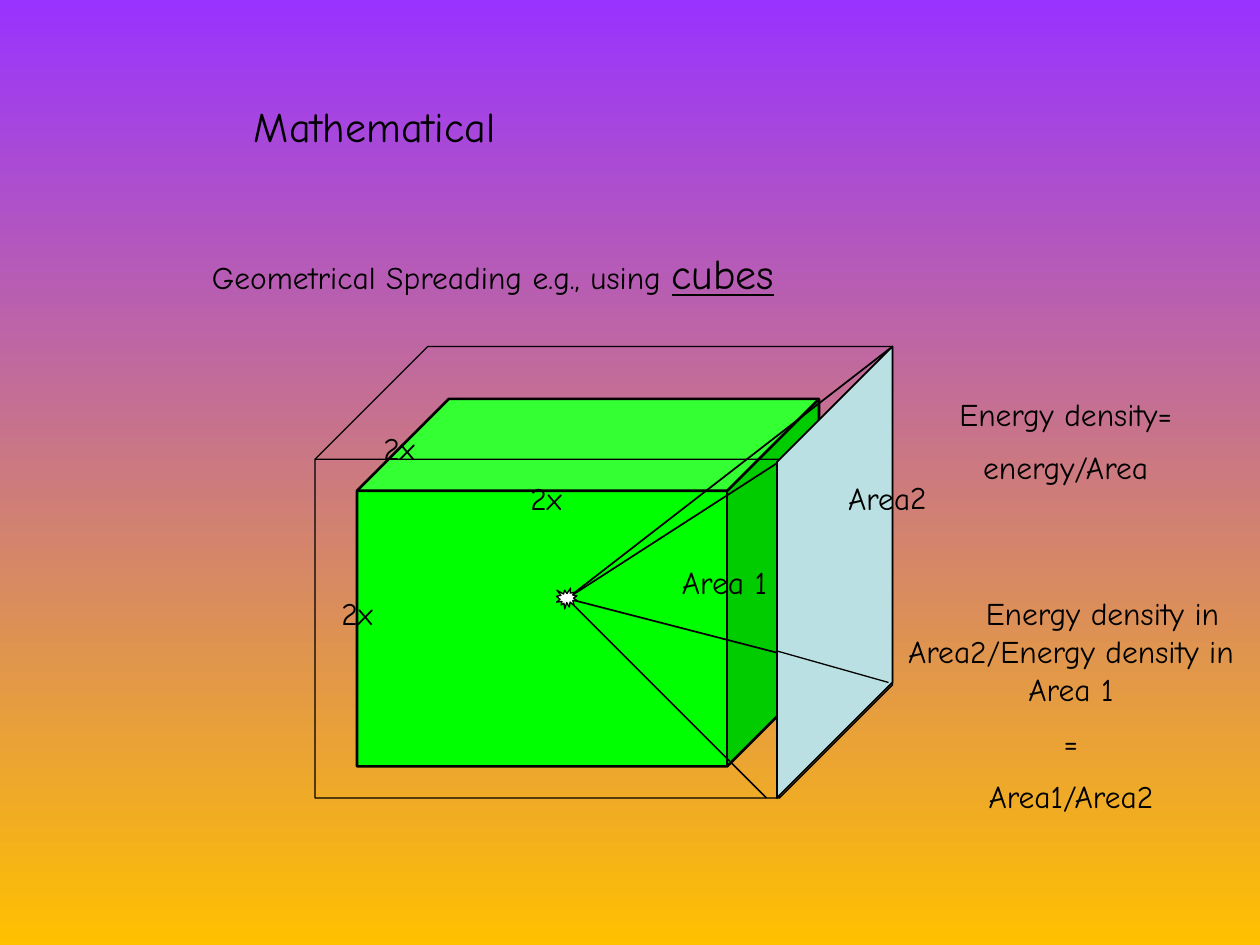
from dataclasses import dataclass

from lxml import etree
from pptx import Presentation
from pptx.dml.color import RGBColor
from pptx.enum.shapes import MSO_CONNECTOR, MSO_SHAPE
from pptx.enum.text import PP_ALIGN
from pptx.oxml.ns import qn
from pptx.util import Emu, Pt

STRAIGHT = MSO_CONNECTOR.STRAIGHT
CUBE, BURST = MSO_SHAPE.CUBE, MSO_SHAPE.EXPLOSION1
LEFT, CENTER = PP_ALIGN.LEFT, PP_ALIGN.CENTER
EMU_PER_PX = 9525  # 96 px to the inch


@dataclass(frozen=True)
class Theme:
    font: str = "Comic Neue"
    ink: str = "000000"
    sky: str = "9933FF"
    ground: str = "FFC000"
    inner: str = "00FF00"
    face: str = "BBE0E3"
    burst: str = "FFFFFF"
    large: int = 24
    body: int = 18
    gap: int = 9
    thin: float = 0.75
    medium: float = 1
    thick: float = 1.5


THEME = Theme()


def px(*lengths):
    return [Emu(length * EMU_PER_PX) for length in lengths]


def rgb(code):
    return RGBColor.from_string(code)


def set_outline(line, width):
    line.color.rgb = rgb(THEME.ink)
    line.width = Pt(width)


def paint(shape, fill, width):
    shape.shadow.inherit = False
    if fill:
        shape.fill.solid()
        shape.fill.fore_color.rgb = rgb(fill)
    else:
        shape.fill.background()
    set_outline(shape.line, width)


def add_background(slide):
    fill = slide.background.fill
    fill.gradient()
    fill.gradient_angle = 270
    for stop, color in zip(fill.gradient_stops, (THEME.sky, THEME.ground)):
        stop.color.rgb = rgb(color)


def add_text(slide, box, *lines, size=THEME.body, align=CENTER, rotation=0):
    label = slide.shapes.add_textbox(*px(*box))
    label.rotation = rotation
    frame = label.text_frame
    frame.word_wrap = True
    for index, line in enumerate(lines):
        paragraph = frame.paragraphs[0] if index == 0 else frame.add_paragraph()
        if index:
            paragraph.space_before = Pt(THEME.gap)
        paragraph.alignment = align
        paragraph.font.name = THEME.font
        paragraph.font.size = Pt(size)
        paragraph.font.color.rgb = rgb(THEME.ink)
        paragraph.add_run().text = line
    return frame


def add_solid(slide, kind, box, fill, width):
    solid = slide.shapes.add_shape(kind, *px(*box))
    paint(solid, fill, width)


def add_line(slide, start, end, width):
    line = slide.shapes.add_connector(STRAIGHT, *px(*start, *end))
    set_outline(line.line, width)
    etree.SubElement(line._element.spPr, qn("a:effectLst"))


def add_polygon(slide, points, fill, width):
    builder = slide.shapes.build_freeform(*points[0], scale=EMU_PER_PX)
    builder.add_line_segments(points[1:], close=True)
    paint(builder.convert_to_shape(), fill, width)


def main():
    deck = Presentation()
    deck.slide_width, deck.slide_height = px(960, 720)
    slide = deck.slides.add_slide(deck.slide_layouts[6])
    add_background(slide)

    # Headings
    add_text(slide, (184, 72, 520, 48), "Mathematical",
             size=THEME.large, align=LEFT)
    subtitle = add_text(slide, (152, 184, 528, 48),
                        "Geometrical Spreading e.g., using ", align=LEFT)
    emphasis = subtitle.paragraphs[0].add_run()
    emphasis.text = "cubes"
    emphasis.font.size = Pt(THEME.large)
    emphasis.font.underline = True

    # Inner cube and the rays from the source
    source = (432, 456)
    add_solid(slide, CUBE, (272, 304, 352, 280), THEME.inner, THEME.thick)
    for target in ((680, 264), (584, 608), (680, 520), (595, 351)):
        add_line(slide, source, target, THEME.medium)

    # Outer cube, its right face and the ray seen on that face
    add_solid(slide, CUBE, (240, 264, 440, 344), None, THEME.thin)
    right_face = [(592, 352), (680, 264), (680, 520), (592, 608)]
    add_polygon(slide, right_face, THEME.face, THEME.medium)
    add_line(slide, (592, 496), (677, 520), THEME.thin)

    # Edge and area labels
    for left, top in ((376, 360), (232, 448), (264, 322)):
        add_text(slide, (left, top, 80, 38), "2x")
    add_text(slide, (608, 360, 136, 38), "Area2", rotation=359.4)
    add_text(slide, (504, 424, 96, 38), "Area 1")

    # Energy density relations
    add_text(slide, (720, 296, 184, 110), "Energy density=", "energy/Area")
    add_text(slide, (672, 448, 288, 182),
             "\tEnergy density in Area2/Energy density in Area 1",
             "=", "Area1/Area2")

    # Source burst
    add_solid(slide, BURST, (source[0] - 8, source[1] - 8, 16, 16),
              THEME.burst, THEME.thin)

    deck.save("out.pptx")


if __name__ == "__main__":
    main()
